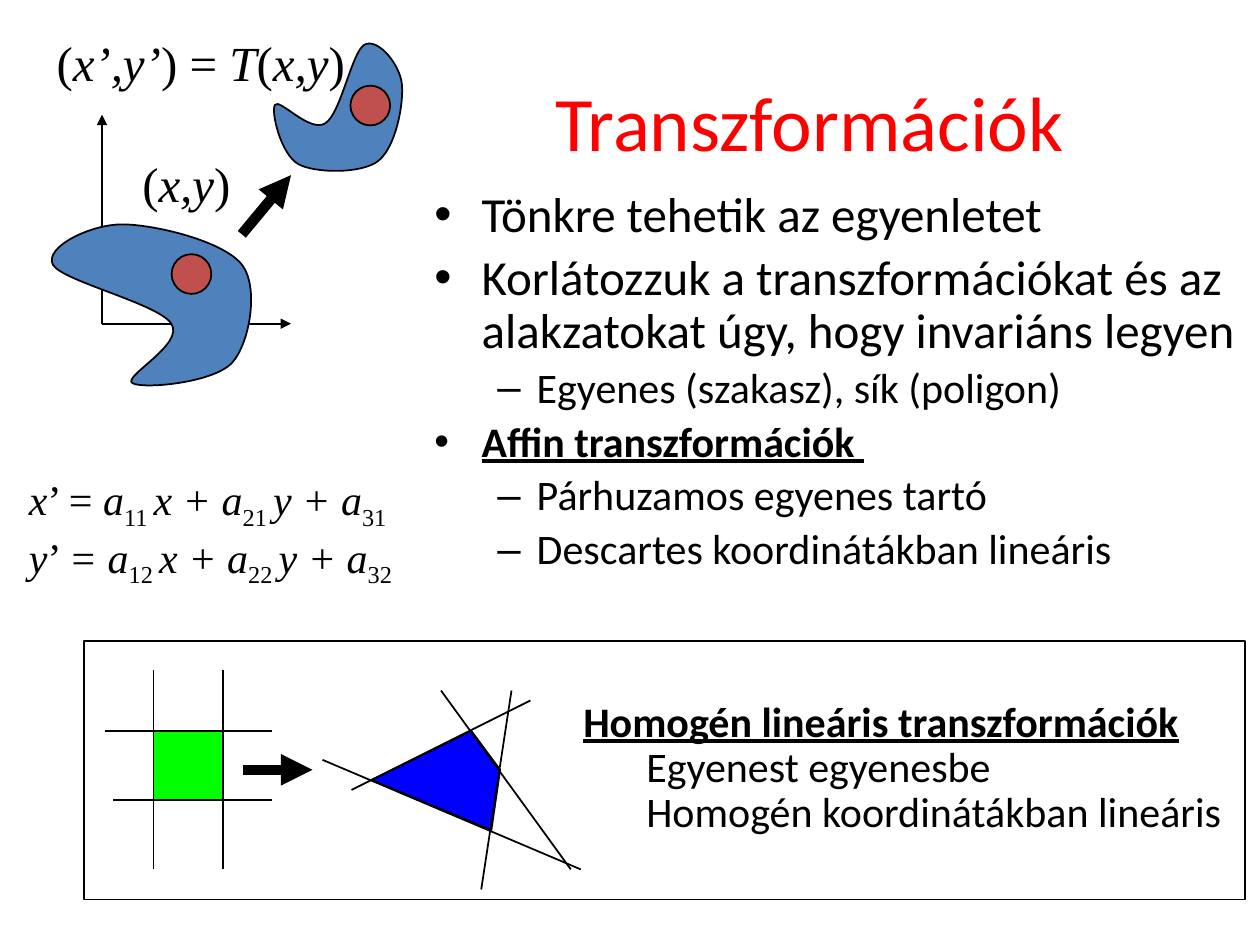
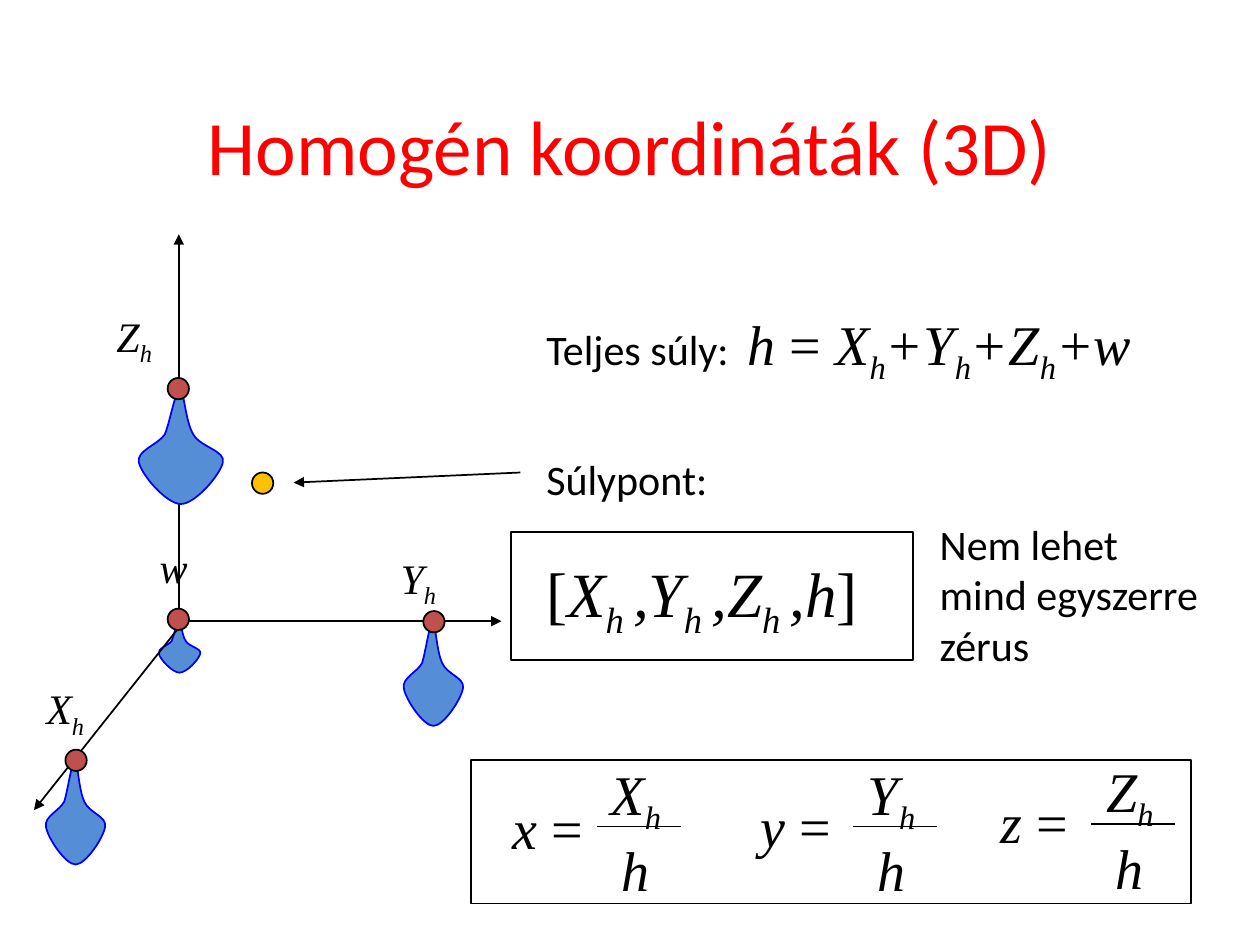
from dataclasses import dataclass
from typing import NamedTuple

from lxml import etree
from pptx import Presentation
from pptx.dml.color import RGBColor
from pptx.enum.shapes import MSO_CONNECTOR, MSO_SHAPE
from pptx.enum.text import MSO_AUTO_SIZE, PP_ALIGN
from pptx.oxml.ns import qn
from pptx.util import Pt

BLACK = RGBColor(0x00, 0x00, 0x00)
TITLE_RED = RGBColor(0xFF, 0x00, 0x00)
SHAPE_BLUE = RGBColor(0x4F, 0x81, 0xBD)
DROP_BLUE = RGBColor(0x55, 0x8E, 0xD5)
PURE_BLUE = RGBColor(0x00, 0x00, 0xFF)
DOT_RED = RGBColor(0xC0, 0x50, 0x4D)
GOLD = RGBColor(0xFF, 0xC0, 0x00)
GREEN = RGBColor(0x00, 0xFF, 0x00)

SANS = "Calibri"
SERIF = "Times New Roman"

RECTANGLE = MSO_SHAPE.RECTANGLE
OVAL = MSO_SHAPE.OVAL
STRAIGHT = MSO_CONNECTOR.STRAIGHT
FIT_SHAPE = MSO_AUTO_SIZE.SHAPE_TO_FIT_TEXT
LEFT = PP_ALIGN.LEFT
CENTER = PP_ALIGN.CENTER

TITLE_AND_BODY = 1
TITLE_ONLY = 5
DOT_SIZE = 12.2

Point = tuple[float, float]


class Box(NamedTuple):
    left: float
    top: float
    width: float
    height: float

    def lengths(self) -> list[Pt]:
        return [Pt(value) for value in self]


class Span(NamedTuple):
    text: str
    italic: bool = False
    lowered: bool = False


class Line(NamedTuple):
    start: Point
    end: Point
    arrow: bool = False
    width: float = 1


@dataclass(frozen=True)
class Item:
    text: str
    level: int = 0
    size: int = 24
    strong: bool = False


@dataclass(frozen=True)
class Mass:
    """A weight hanging as a drop from a dot."""
    dot: Point
    drop: Box


@dataclass(frozen=True)
class Fraction:
    name: str
    numerator: str
    name_at: Point
    bar_at: Point


# Cubic curves: a start point, then two handles and an end point per curve.
BLOB = [
    (138.2, 151.2), (127.4, 137.5), (87.8, 128.2), (69.8, 128.2), (51.8, 128.2),
    (25.2, 141.1), (30.2, 151.2), (35.3, 160.6), (90.7, 173.5), (97.9, 185),
    (105.8, 196.6), (69.8, 215.3), (75.6, 218.9), (81.4, 222.5), (121.7, 218.9),
    (132.5, 207.4), (142.6, 196.6), (148.3, 164.2), (138.2, 151.2)]
UNIT_DROP = [
    (0.5, 0), (0.44, 0), (0.38, 0.29), (0.32, 0.4), (0.24, 0.49), (0, 0.54),
    (0.03, 0.64), (0.06, 0.75), (0.34, 1), (0.5, 1), (0.66, 1), (0.94, 0.75),
    (0.97, 0.64), (1, 0.54), (0.72, 0.51), (0.64, 0.4), (0.56, 0.3), (0.54, 0.08),
    (0.5, 0)]
QUADRILATERAL = [(212.4, 445.7), (269.3, 417.6), (285.8, 439.9), (280.8, 474.5)]

ITEMS = [
    Item("Tönkre tehetik az egyenletet", size=28),
    Item("Korlátozzuk a transzformációkat és az alakzatokat úgy, hogy invariáns legyen",
         size=28),
    Item("Egyenes (szakasz), sík (poligon)", level=1),
    Item("Affin transzformációk ", strong=True),
    Item("Párhuzamos egyenes tartó", level=1),
    Item("Descartes koordinátákban lineáris", level=1)]
HOMOGENEOUS_ITEMS = [
    Item("Homogén lineáris transzformációk", strong=True),
    Item("Egyenest egyenesbe", level=1),
    Item("Homogén koordinátákban lineáris", level=1)]

PLANE_AXES = [Line((58.3, 185), (58.3, 65.5), True), Line((58.3, 185), (166.3, 185), True)]
QUADRILATERAL_LINES = [
    Line((292.3, 394.6), (275, 508.3)), Line((303.1, 400.3), (200.9, 451.4)),
    Line((331.9, 496.8), (184.3, 434.2)), Line((326.2, 496.8), (252, 394.6))]
SQUARE = Box(87.8, 417.6, 39.6, 39.6)
SQUARE_LINES = [
    Line((87.8, 383), (87.8, 496.8)), Line((127.4, 383), (127.4, 496.8)),
    Line((59.8, 417.6), (155.5, 417.6)), Line((64.8, 457.2), (155.5, 457.2))]

MASSES = [
    Mass((101.9, 353.9), Box(90, 354.2, 25.2, 30.2)),
    Mass((248, 355.3), Box(229.7, 355, 36, 59.8)),
    Mass((101.9, 222.1), Box(77.8, 221.8, 51.1, 66.2)),
    Mass((43.5, 434.5), Box(25.2, 434.2, 36, 59.8))]
FRACTIONS = [
    Fraction("x", "X", (285.8, 450), (341.3, 472.3)),
    Fraction("y", "Y", (427.7, 448.6), (487.4, 472.3)),
    Fraction("z", "Z", (564.5, 446.4), (623.5, 470.9))]


def variable(text: str) -> Span:
    return Span(text, italic=True)


def subscript(text: str, italic: bool = True) -> Span:
    return Span(text, italic, lowered=True)


def style_outline(shape, fill: RGBColor | None, line: RGBColor = BLACK) -> None:
    shape.shadow.inherit = False
    if fill is None:
        shape.fill.background()
    else:
        shape.fill.solid()
        shape.fill.fore_color.rgb = fill
    shape.line.color.rgb = line
    shape.line.width = Pt(1)


def draw_shape(slide, kind, box: Box, fill: RGBColor | None = None) -> None:
    style_outline(slide.shapes.add_shape(kind, *box.lengths()), fill)


def draw_dot(slide, center: Point, fill: RGBColor, size: float = DOT_SIZE) -> None:
    x, y = center
    draw_shape(slide, OVAL, Box(x - size / 2, y - size / 2, size, size), fill)


def draw_polygon(slide, points: list[Point], fill: RGBColor, line: RGBColor = BLACK):
    corners = [(Pt(x), Pt(y)) for x, y in points]
    builder = slide.shapes.build_freeform(*corners[0])
    builder.add_line_segments(corners[1:], close=True)
    shape = builder.convert_to_shape()
    style_outline(shape, fill, line)
    return shape


def draw_curves(slide, points: list[Point], fill: RGBColor, line: RGBColor = BLACK):
    """Draw a polygon and turn each three of its sides into one cubic curve."""
    shape = draw_polygon(slide, points, fill, line)
    sides = list(shape._element.iter(qn("a:lnTo")))
    for first in range(0, len(points) - 1, 3):
        curve = etree.Element(qn("a:cubicBezTo"))
        sides[first].addprevious(curve)
        for side in sides[first:first + 3]:
            curve.append(side[0])
    for side in sides:
        side.getparent().remove(side)
    return shape


def draw_drop(slide, box: Box) -> None:
    points = [(box.left + x * box.width, box.top + y * box.height) for x, y in UNIT_DROP]
    draw_curves(slide, points, DROP_BLUE, PURE_BLUE)


def draw_line(slide, line: Line) -> None:
    ends = [Pt(value) for value in (*line.start, *line.end)]
    connector = slide.shapes.add_connector(STRAIGHT, *ends)
    connector.line.color.rgb = BLACK
    connector.line.width = Pt(line.width)
    properties = connector._element.spPr
    if line.arrow:
        etree.SubElement(properties.find(qn("a:ln")), qn("a:tailEnd"), type="triangle")
    etree.SubElement(properties, qn("a:effectLst"))


def draw_lines(slide, lines: list[Line]) -> None:
    for line in lines:
        draw_line(slide, line)


def add_text_frame(slide, box: Box, wrap: bool = False):
    frame = slide.shapes.add_textbox(*box.lengths()).text_frame
    frame.word_wrap = wrap
    frame.auto_size = FIT_SHAPE
    return frame


def set_font(para, name: str, size: float) -> None:
    para.font.name = name
    para.font.size = Pt(size)


def next_paragraph(frame, index: int):
    return frame.add_paragraph() if index else frame.paragraphs[0]


def add_spans(para, spans: list[Span]) -> None:
    for span in spans:
        run = para.add_run()
        run.text = span.text
        run.font.italic = span.italic
        if span.lowered:
            run._r.get_or_add_rPr().set("baseline", "-25000")


def add_formula(slide, box: Box, size: float, rows: list[list[Span]], align=LEFT) -> None:
    frame = add_text_frame(slide, box)
    for index, spans in enumerate(rows):
        para = next_paragraph(frame, index)
        para.alignment = align
        set_font(para, SERIF, size)
        add_spans(para, spans)


def write_items(frame, items: list[Item]) -> None:
    for index, item in enumerate(items):
        para = next_paragraph(frame, index)
        para.text = item.text
        para.level = item.level
        para.line_spacing = 0.9
        set_font(para, SANS, item.size)
        if item.strong:
            para.font.bold = para.font.underline = True


def place(shape, box: Box) -> None:
    shape.left, shape.top, shape.width, shape.height = box.lengths()


def add_slide(deck, layout: int, title: str, title_box: Box):
    slide = deck.slides.add_slide(deck.slide_layouts[layout])
    place(slide.shapes.title, title_box)
    slide.shapes.title.text_frame.text = title
    para = slide.shapes.title.text_frame.paragraphs[0]
    set_font(para, SANS, 44)
    para.font.color.rgb = TITLE_RED
    return slide


def build_transformations(deck) -> None:
    slide = add_slide(deck, TITLE_AND_BODY, "Transzformációk", Box(248.7, 23.9, 427.7, 90))
    draw_shape(slide, RECTANGLE, Box(48.2, 366.5, 663.1, 147.6))
    body = slide.placeholders[1]
    place(body, Box(241, 105.1, 478.8, 244.1))
    write_items(body.text_frame, ITEMS)

    draw_lines(slide, PLANE_AXES)
    draw_curves(slide, BLOB, SHAPE_BLUE)
    transformed = draw_curves(slide, BLOB, SHAPE_BLUE)
    place(transformed, Box(154.8, 24.5, 76.3, 76.3))
    transformed.rotation = 83.3
    for center in ((109.4, 156.6), (211.6, 60.3)):
        draw_dot(slide, center, DOT_RED, 22.7)
    point = [Span("("), variable("x,y"), Span(")")]
    add_formula(slide, Box(74.2, 84.2, 65.5, 41), 28, [point])
    add_formula(slide, Box(25.2, 15.1, 181.4, 41), 28,
                [[Span("("), variable("x’,y’"), Span(") = "), variable("T"), *point]])
    draw_line(slide, Line((138.2, 133.9), (166.3, 100.1), True, 6))

    draw_polygon(slide, QUADRILATERAL, PURE_BLUE)
    frame = add_text_frame(slide, Box(326.2, 396.9, 385.2, 85.7), wrap=True)
    write_items(frame, HOMOGENEOUS_ITEMS)
    for para in frame.paragraphs[1:]:
        para._p.get_or_add_pPr().set("marL", str(Pt(36)))
    draw_lines(slide, QUADRILATERAL_LINES)
    draw_shape(slide, RECTANGLE, SQUARE, GREEN)
    draw_lines(slide, SQUARE_LINES)
    draw_line(slide, Line((139, 439.9), (178.6, 439.9), True, 6))

    starts = [[variable("x"), Span("’ = "), variable("a")],
              [variable("y"), Span("’ "), variable("= a")]]
    rows = [[*start, subscript(f"1{column} ", False), variable("x + a"),
             subscript(f"2{column} ", False), variable("y + a"),
             subscript(f"3{column}", False)]
            for column, start in enumerate(starts, 1)]
    add_formula(slide, Box(9.4, 267.1, 231.8, 65.5), 24, rows)


def add_weight_text(slide) -> None:
    frame = add_text_frame(slide, Box(305.1, 173.5, 362.2, 273.6))
    total, center, coordinates = (next_paragraph(frame, index) for index in range(3))
    set_font(total, SERIF, 32)
    label = total.add_run()
    label.text = "Teljes súly:"
    label.font.name = SANS
    label.font.size = Pt(24)
    h = subscript("h")
    add_spans(total, [Span(" "), variable("h"), Span(" = "), variable("X"), h,
                      variable("+Y"), h, variable("+Z"), h, variable("+w")])
    total.runs[1]._r.get_or_add_rPr().set("spc", "280")

    center.text = "Súlypont:"
    center.space_before = Pt(38.5)
    set_font(center, SANS, 24)

    coordinates.space_before = Pt(28.7)
    set_font(coordinates, SERIF, 36)
    h = subscript("h ")
    add_spans(coordinates, [Span("["), variable("X"), h, variable(",Y"), h,
                            variable(",Z"), h, variable(",h"), Span("]")])


def build_homogeneous_coordinates(deck) -> None:
    slide = add_slide(deck, TITLE_ONLY, "Homogén koordináták (3D)", Box(19.8, 37.7, 680.4, 90))
    draw_line(slide, Line((102.2, 349.2), (102.2, 133.9), True))
    draw_dot(slide, (150.1, 276.1), GOLD)
    for mass in MASSES:
        draw_drop(slide, mass.drop)
    for name, left, top in (("Y", 221.8, 312), ("Z", 59.5, 173.8), ("X", 19.4, 386.6)):
        add_formula(slide, Box(left, top, 36, 36), 24, [[variable(name), subscript("h")]])
    add_formula(slide, Box(84.2, 306, 30.2, 36), 24, [[variable("w")]])
    add_weight_text(slide)
    draw_shape(slide, RECTANGLE, Box(292.1, 304, 229.7, 73.4))
    draw_lines(slide, [Line((297.4, 270), (167.8, 275.8), True),
                       Line((105.1, 355), (286.6, 355), True),
                       Line((105.1, 355), (19.4, 463), True)])
    note = add_text_frame(slide, Box(529.9, 292.6, 169.9, 94.3), wrap=True)
    note.text = "Nem lehet mind egyszerre zérus"
    set_font(note.paragraphs[0], SANS, 24)

    draw_shape(slide, RECTANGLE, Box(269.3, 434.2, 411.1, 82.1))
    for fraction in FRACTIONS:
        left, top = fraction.bar_at
        add_formula(slide, Box(*fraction.name_at, 56, 45.4), 32,
                    [[variable(fraction.name), Span(" =")]])
        add_formula(slide, Box(left + 0.5, top - 42, 43.2, 84.2), 32,
                    [[variable(fraction.numerator), subscript("h")], [variable("h")]], CENTER)
        draw_line(slide, Line((left, top), (left + 47.8, top)))
    for mass in MASSES:
        draw_dot(slide, mass.dot, DOT_RED)


def main() -> None:
    deck = Presentation()
    deck.slide_width, deck.slide_height = Pt(720), Pt(540)
    build_transformations(deck)
    build_homogeneous_coordinates(deck)
    deck.save("out.pptx")


if __name__ == "__main__":
    main()
